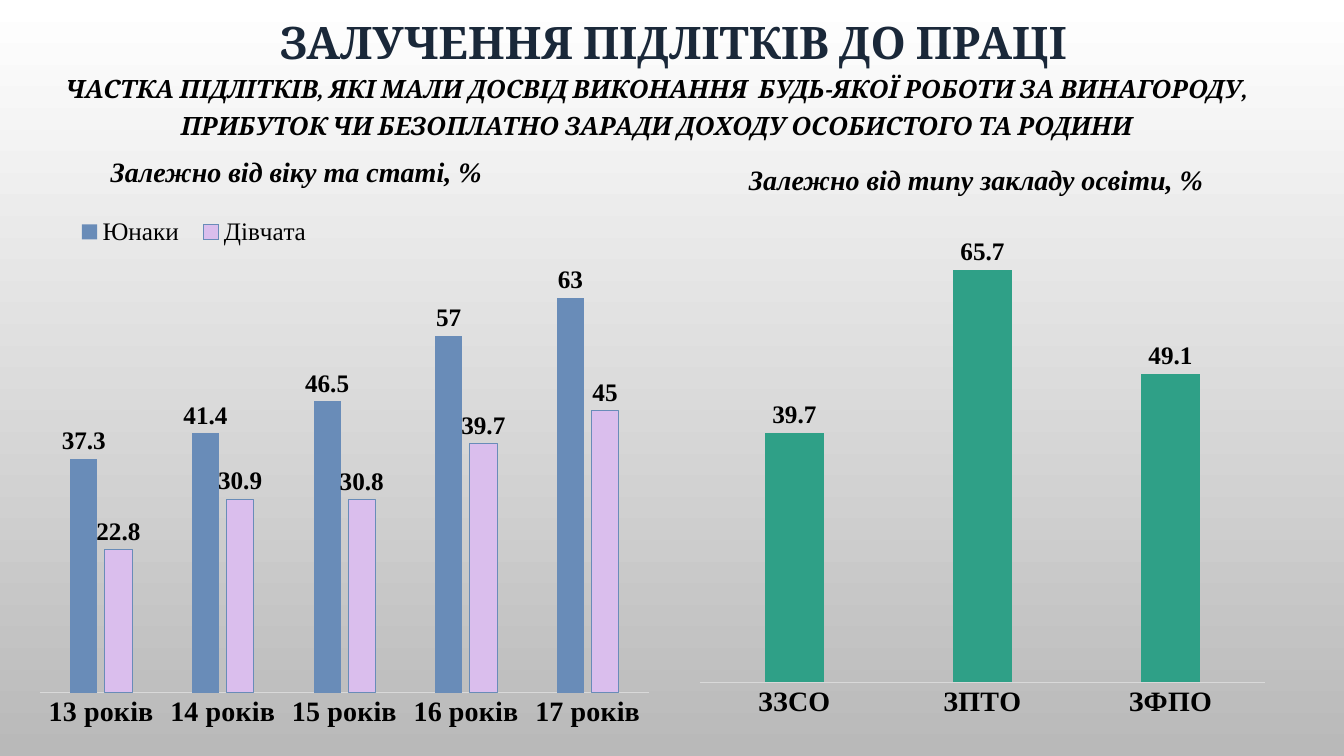
from dataclasses import dataclass

import pptx
import pptx.chart.data
import pptx.dml.color
import pptx.enum.chart
import pptx.enum.text
import pptx.oxml
import pptx.oxml.ns
import pptx.util

Inches = pptx.util.Inches
Pt = pptx.util.Pt
Align = pptx.enum.text.PP_ALIGN
Anchor = pptx.enum.text.MSO_ANCHOR


def rgb(code):
    return pptx.dml.color.RGBColor.from_string(code)


@dataclass(frozen=True)
class Theme:
    heading_font: str = "Cambria"
    body_font: str = "Times New Roman"
    title_size: int = 32
    caption_size: int = 20
    label_size: int = 18
    title: str = "1A2839"
    ink: str = "000000"
    axis: str = "D9D9D9"
    sky: str = "FFFFFF"
    ground: str = "B9B9B9"
    boys: str = "698CB8"
    girls: str = "DABEED"
    schools: str = "2FA087"


THEME = Theme()


def style_font(font, name, size, color=THEME.ink, bold=True, italic=False):
    font.name = name
    font.size = Pt(size)
    font.bold = bold
    font.italic = italic
    font.color.rgb = rgb(color)


def place(shape, box):
    shape.left, shape.top, shape.width, shape.height = map(Inches, box)


def paint_background(page):
    fill = page.background.fill
    fill.gradient()
    fill.gradient_angle = 270
    for stop, position, color in zip(fill.gradient_stops, (0, 1), (THEME.sky, THEME.ground)):
        stop.position = position
        stop.color.rgb = rgb(color)


def add_title(page, box, text):
    title = page.shapes.title
    place(title, box)
    frame = title.text_frame
    frame.text = text
    frame.vertical_anchor = Anchor.MIDDLE
    frame.auto_size = pptx.enum.text.MSO_AUTO_SIZE.NONE
    para = frame.paragraphs[0]
    para.alignment = Align.CENTER
    para.line_spacing = 0.9
    style_font(para.font, THEME.heading_font, THEME.title_size, THEME.title)


def add_caption(page, box, text, font_name=THEME.body_font, size=THEME.caption_size,
                align=Align.LEFT):
    frame = page.shapes.add_textbox(*map(Inches, box)).text_frame
    frame.word_wrap = True
    frame.vertical_anchor = Anchor.BOTTOM
    frame.text = text
    para = frame.paragraphs[0]
    para.alignment = align
    para.line_spacing = 1.2
    style_font(para.font, font_name, size, italic=True)


def set_layout(parent, index, fractions, inner=False):
    for old in parent.findall(pptx.oxml.ns.qn("c:layout")):
        parent.remove(old)
    target = '<c:layoutTarget val="inner"/>' if inner else ""
    values = "".join(f'<c:{key} val="{value}"/>' for key, value in zip("xywh", fractions))
    parent.insert(index, pptx.oxml.parse_xml(
        f'<c:layout {pptx.oxml.ns.nsdecls("c")}><c:manualLayout>{target}'
        f'<c:xMode val="edge"/><c:yMode val="edge"/>{values}</c:manualLayout></c:layout>'))


def add_column_chart(page, box, categories, series, plot_area, legend_area=None):
    data = pptx.chart.data.CategoryChartData()
    data.categories = categories
    for name, values, _, _ in series:
        data.add_series(name, values)
    chart = page.shapes.add_chart(
        pptx.enum.chart.XL_CHART_TYPE.COLUMN_CLUSTERED, *map(Inches, box), data).chart
    chart.has_title = False
    style_font(chart.font, THEME.body_font, THEME.label_size, bold=False)

    value_axis = chart.value_axis
    value_axis.minimum_scale, value_axis.maximum_scale = 0, 70
    value_axis.has_major_gridlines = False
    value_axis.visible = False

    category_axis = chart.category_axis
    category_axis.major_tick_mark = pptx.enum.chart.XL_TICK_MARK.NONE
    category_axis.format.line.color.rgb = rgb(THEME.axis)
    category_axis.format.line.width = Pt(0.75)
    style_font(category_axis.tick_labels.font, THEME.body_font, THEME.caption_size)

    plot = chart.plots[0]
    plot.gap_width, plot.overlap = 219, -27
    plot.vary_by_categories = False
    plot.has_data_labels = True
    labels = plot.data_labels
    labels.show_value = True
    labels.position = pptx.enum.chart.XL_LABEL_POSITION.OUTSIDE_END
    style_font(labels.font, THEME.body_font, THEME.label_size)
    for columns, (_, _, color, outline) in zip(plot.series, series):
        columns.format.fill.solid()
        columns.format.fill.fore_color.rgb = rgb(color)
        if outline:
            columns.format.line.color.rgb = rgb(outline)
            columns.format.line.width = Pt(0.75)
        else:
            columns.format.line.fill.background()
    set_layout(chart.plots[0]._element.getparent(), 0, plot_area, inner=True)

    chart.has_legend = legend_area is not None
    if legend_area:
        legend = chart.legend
        legend.position = pptx.enum.chart.XL_LEGEND_POSITION.BOTTOM
        legend.include_in_layout = False
        style_font(legend.font, THEME.body_font, THEME.label_size, bold=False)
        set_layout(legend._element, 1, legend_area)


def build_labour_slide(deck):
    page = deck.slides.add_slide(deck.slide_layouts[5])
    paint_background(page)
    add_title(page, (0.71, 0.07, 11.94, 0.75), "ЗАЛУЧЕННЯ ПІДЛІТКІВ ДО ПРАЦІ")
    add_caption(page, (-0.01, 0.73, 13.05, 0.71),
                "ЧАСТКА ПІДЛІТКІВ, ЯКІ МАЛИ ДОСВІД ВИКОНАННЯ  БУДЬ-ЯКОЇ РОБОТИ ЗА ВИНАГОРОДУ, "
                "ПРИБУТОК ЧИ БЕЗОПЛАТНО ЗАРАДИ ДОХОДУ ОСОБИСТОГО ТА РОДИНИ",
                THEME.heading_font, THEME.label_size, Align.CENTER)
    add_caption(page, (1, 1.38, 4.17, 0.54), "Залежно від віку та статі, %")
    add_caption(page, (7.33, 1.45, 5.32, 0.54), "Залежно від типу закладу освіти, %")
    add_column_chart(
        page, (6.77, 1.92, 5.89, 5.45), ("ЗЗСО", "ЗПТО", "ЗФПО"),
        [("Частка", (39.7, 65.7, 49.1), THEME.schools, None)],
        (0.03, 0.09, 0.95, 0.8))
    add_column_chart(
        page, (0.21, 1.86, 6.35, 5.51), [f"{age} років" for age in range(13, 18)],
        [("Юнаки", (37.3, 41.4, 46.5, 57, 63), THEME.boys, None),
         ("Дівчата", (22.8, 30.9, 30.8, 39.7, 45), THEME.girls, THEME.boys)],
        (0.03, 0.12, 0.95, 0.79), (0.07, 0.04, 0.4, 0.08))


def main():
    deck = pptx.Presentation()
    deck.slide_width, deck.slide_height = Inches(13.33), Inches(7.5)
    build_labour_slide(deck)
    deck.save("out.pptx")


if __name__ == "__main__":
    main()
